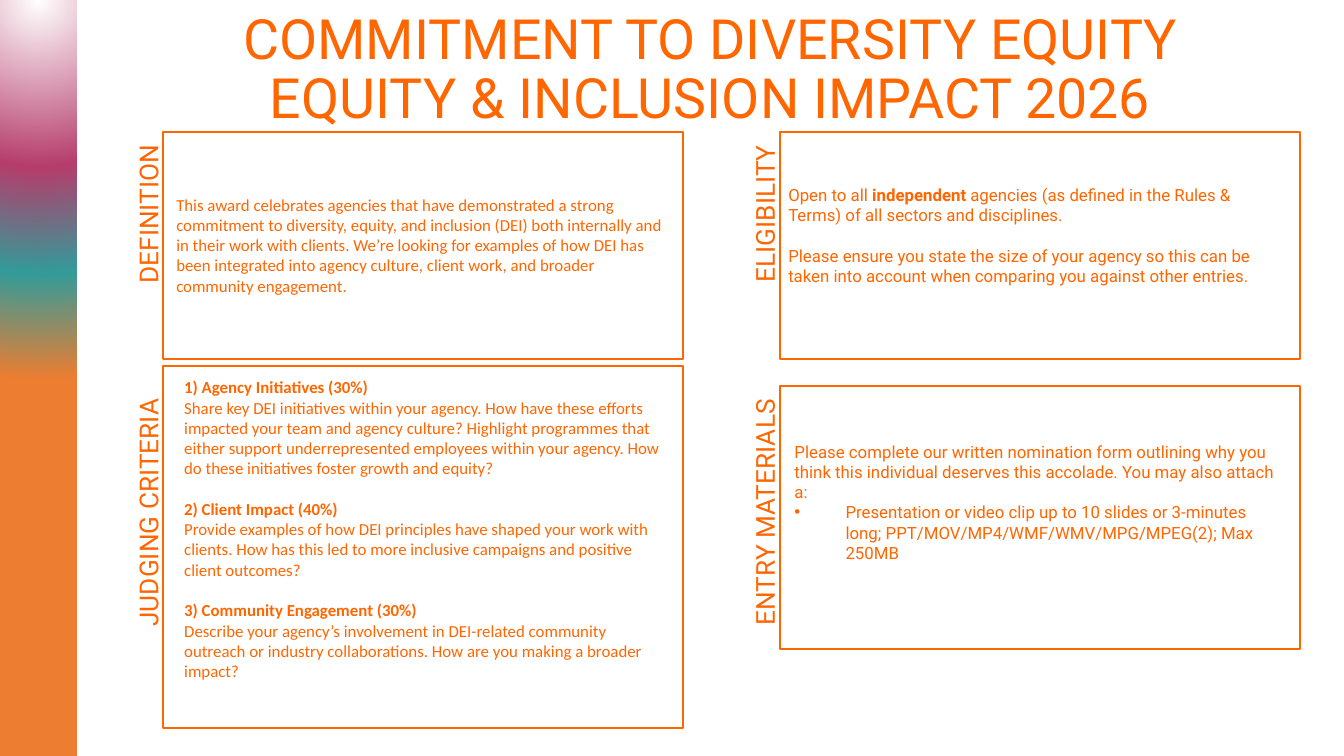
from dataclasses import dataclass

from lxml import etree
from pptx import Presentation
from pptx import util as u
from pptx.dml.color import RGBColor
from pptx.enum import shapes, text
from pptx.oxml import ns


@dataclass(frozen=True)
class Theme:
    ink: str = "FF6600"
    stops: tuple = ((0, "FFFFFF"), (44, "B53D6B"), (72, "339B99"), (100, "ED7D31"))
    head: str = "Roboto"
    plain: str = "Calibri"
    title: float = 29.7
    label: int = 14
    body: int = 9


@dataclass(frozen=True)
class Rect:
    left: int
    top: int
    width: int
    height: int


@dataclass(frozen=True)
class Panel:
    label: str
    span: int  # length of the upright label
    row: int  # top end of the label
    frame: Rect
    area: Rect
    font: str
    paras: tuple
    gap: int = 0
    listed: bool = False


THEME = Theme()
WIDE, HIGH, BAR = 1344, 756, 77
LEFT, RIGHT, UPPER, LOWER = 163, 780, 132, 386
BOX, LABEL = 520, 46

PANELS = (
    Panel("DEFINITION", 227, UPPER, Rect(LEFT, UPPER, BOX, 227),
          Rect(LEFT, 187, BOX, 116), THEME.plain, (
              "This award celebrates agencies that have demonstrated a strong commitment to "
              "diversity, equity, and inclusion (DEI) both internally and in their work with "
              "clients. We’re looking for examples of how DEI has been integrated into agency "
              "culture, client work, and broader community engagement.",)),
    Panel("ELIGIBILITY", 218, UPPER, Rect(RIGHT, UPPER, BOX, 227),
          Rect(775, 177, BOX, 116), THEME.head, (
              "Open to all **independent** agencies (as defined in the Rules & Terms) of all "
              "sectors and disciplines.",
              "Please ensure you state the size of your agency so this can be taken into "
              "account when comparing you against other entries."), gap=11),
    Panel("JUDGING CRITERIA", 273, LOWER, Rect(LEFT, 366, BOX, 362),
          Rect(171, 370, 505, 318), THEME.plain, (
              "**1) Agency Initiatives (30%)\n**Share key DEI initiatives within your agency. "
              "How have these efforts impacted your team and agency culture? Highlight "
              "programmes that either support underrepresented employees within your agency. "
              "How do these initiatives foster growth and equity?",
              "**2) Client Impact (40%)\n**Provide examples of how DEI principles have shaped "
              "your work with clients. How has this led to more inclusive campaigns and "
              "positive client outcomes?",
              "**3) Community Engagement (30%)\n**Describe your agency’s involvement in "
              "DEI-related community outreach or industry collaborations. How are you making "
              "a broader impact?"), gap=11),
    Panel("ENTRY MATERIALS", 300, LOWER, Rect(RIGHT, LOWER, BOX, 263),
          Rect(781, 444, 516, 116), THEME.head, (
              "Please complete our written nomination form outlining why you think this "
              "individual deserves this accolade. You may also attach a:",
              "• Presentation or video clip up to 10 slides or 3-minutes long; "
              "PPT/MOV/MP4/WMF/WMV/MPG/MPEG(2); Max 250MB"), listed=True),
)


def px(n: int) -> int:
    return round(n * 914400 / 134.4)


def place(shape, rect: Rect):
    shape.left, shape.top = px(rect.left), px(rect.top)
    shape.width, shape.height = px(rect.width), px(rect.height)
    return shape


def mark(para, dot: bool) -> None:
    """Give a paragraph a hanging bullet, or none."""
    props = para._p.get_or_add_pPr()
    indent = u.Inches(0.38) if dot else 0
    props.set("marL", str(indent))
    props.set("indent", str(-indent))
    bullet = etree.SubElement(props, ns.qn("a:buChar" if dot else "a:buNone"))
    if dot:
        bullet.set("char", "•")


def write(shape, paras: tuple, *, font: str, size: float, align=text.PP_ALIGN.LEFT,
          anchor=text.MSO_ANCHOR.MIDDLE, gap: int = 0, lines: float = 1.0) -> None:
    """Fill a shape with text; ** switches bold and a leading • makes a list item."""
    frame = shape.text_frame
    frame.word_wrap = True
    frame.auto_size = text.MSO_AUTO_SIZE.NONE
    frame.vertical_anchor = anchor
    for i, words in enumerate(paras):
        para = frame.add_paragraph() if i else frame.paragraphs[0]
        para.alignment, para.line_spacing = align, lines
        para.space_before = u.Pt(0)
        para.space_after = u.Pt(gap if i < len(paras) - 1 else 0)
        mark(para, words.startswith("• "))
        for j, part in enumerate(words.removeprefix("• ").split("**")):
            for k, line in enumerate(part.split("\n")):
                if k:
                    para.add_line_break()
                if line:
                    run = para.add_run()
                    run.text = line
                    run.font.name, run.font.size = font, u.Pt(size)
                    run.font.bold = j % 2 == 1
                    run.font.color.rgb = RGBColor.from_string(THEME.ink)


def block(slide, rect: Rect):
    shape = slide.shapes.add_shape(shapes.MSO_SHAPE.RECTANGLE, 0, 0, 0, 0)
    shape.shadow.inherit = False
    return place(shape, rect)


def outline(slide, rect: Rect) -> None:
    shape = block(slide, rect)
    shape.fill.background()
    shape.line.color.rgb = RGBColor.from_string(THEME.ink)
    shape.line.width = u.Pt(1)


def glow(slide, rect: Rect) -> None:
    """Draw a bar with a round gradient centred above its top."""
    shape = block(slide, rect)
    shape.line.fill.background()
    shape.fill.gradient()
    grad = shape._element.spPr.find(ns.qn("a:gradFill"))
    for child in list(grad):
        grad.remove(child)
    stops = etree.SubElement(grad, ns.qn("a:gsLst"))
    for pos, tint in THEME.stops:
        stop = etree.SubElement(stops, ns.qn("a:gs"), pos=str(pos * 1000))
        etree.SubElement(stop, ns.qn("a:srgbClr"), val=tint)
    ring = etree.SubElement(grad, ns.qn("a:path"), path="circle")
    etree.SubElement(ring, ns.qn("a:fillToRect"), l="50000", t="-80000", r="50000", b="180000")


def draw(slide, panel: Panel) -> None:
    outline(slide, panel.frame)
    body = slide.placeholders[1] if panel.listed else slide.shapes.add_textbox(0, 0, 0, 0)
    write(place(body, panel.area), panel.paras, font=panel.font, size=THEME.body, gap=panel.gap)

    mid = panel.frame.left - 15
    top = panel.row + (panel.span - LABEL) // 2
    label = slide.shapes.add_textbox(0, 0, 0, 0)
    place(label, Rect(mid - panel.span // 2, top, panel.span, LABEL)).rotation = 270
    write(label, (panel.label,), font=THEME.head, size=THEME.label,
          align=text.PP_ALIGN.RIGHT, anchor=text.MSO_ANCHOR.TOP)


def main() -> None:
    deck = Presentation()
    deck.slide_width, deck.slide_height = px(WIDE), px(HIGH)
    slide = deck.slides.add_slide(deck.slide_layouts[1])
    title = place(slide.shapes.title, Rect(BAR, 3, WIDE - BAR, 136))
    write(title, ("COMMITMENT TO DIVERSITY EQUITY\nEQUITY & INCLUSION IMPACT 2026",),
          font=THEME.head, size=THEME.title, align=text.PP_ALIGN.CENTER, lines=0.9)
    for panel in PANELS:
        draw(slide, panel)
    glow(slide, Rect(0, 0, BAR, HIGH))
    deck.save("out.pptx")


if __name__ == "__main__":
    main()
